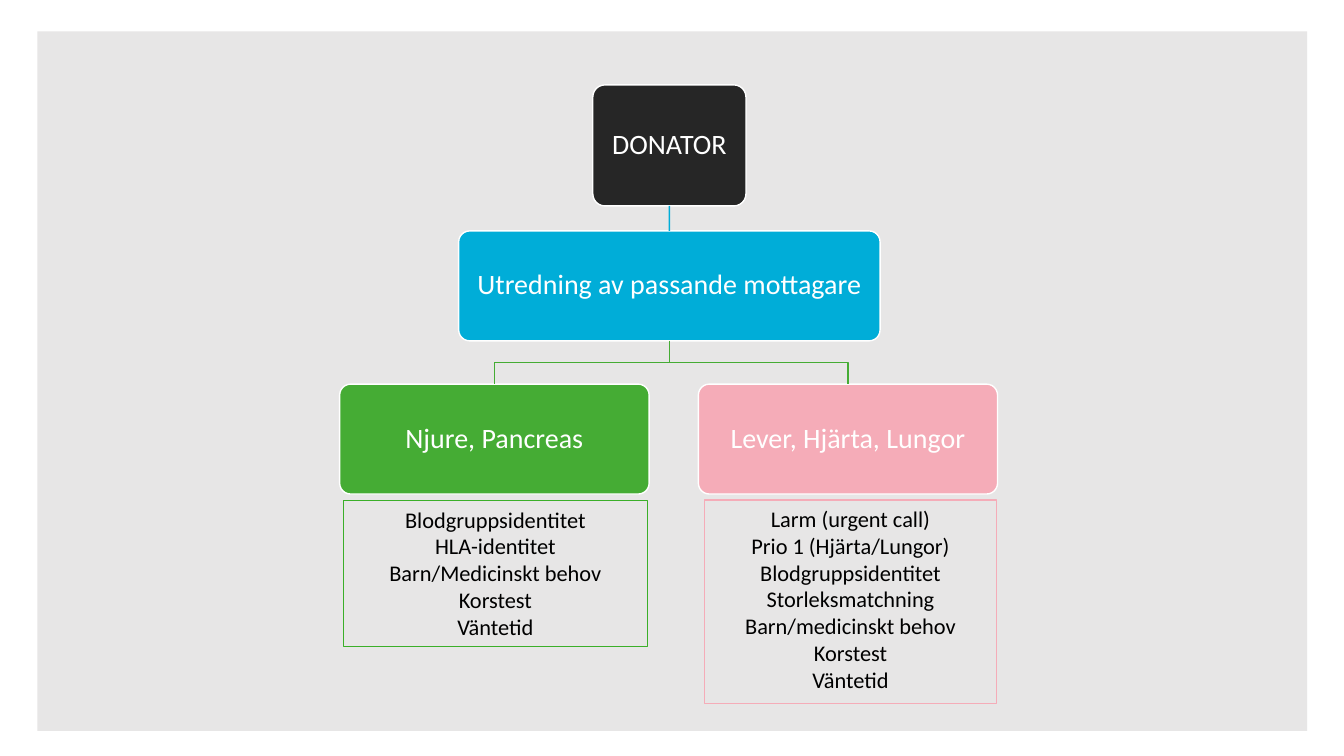
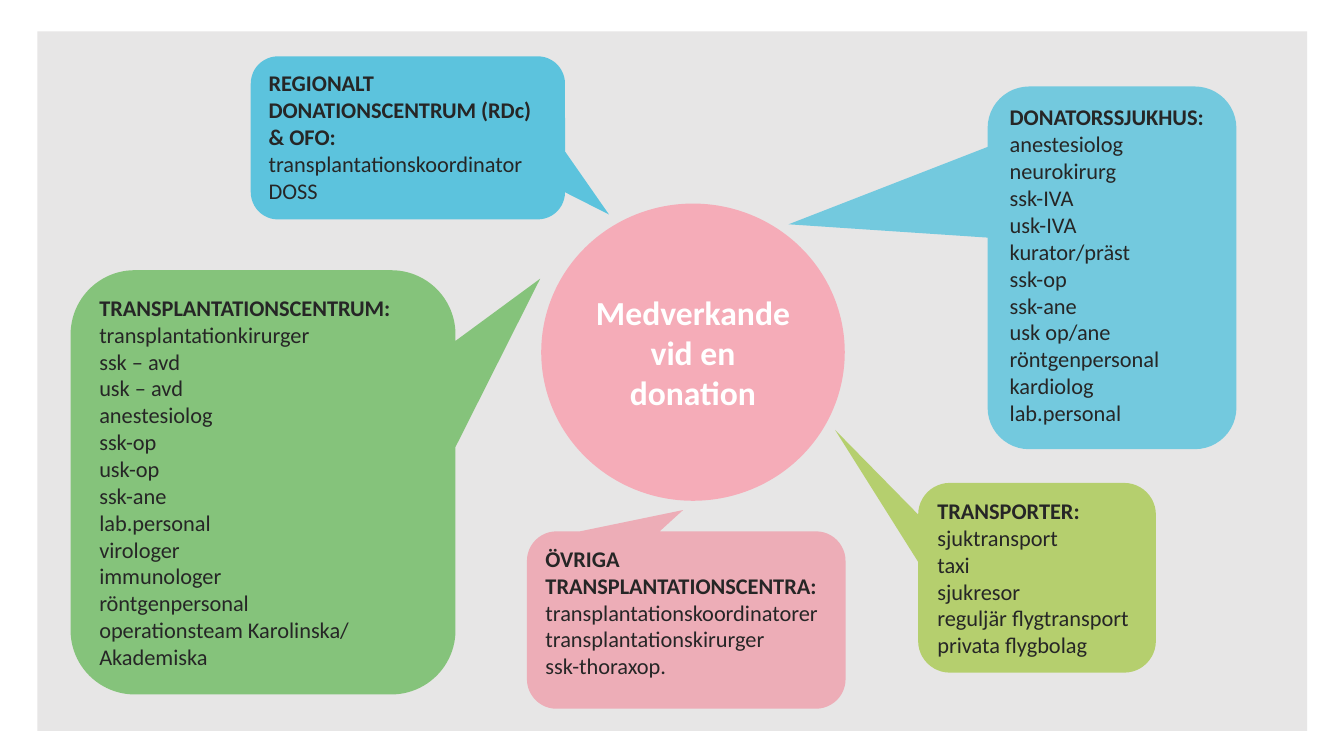
from lxml.etree import SubElement
from pptx import Presentation
from pptx.dml.color import RGBColor
from pptx.enum.shapes import MSO_CONNECTOR as LINE, MSO_SHAPE as SHAPE
from pptx.enum.text import MSO_ANCHOR as ANCHOR, PP_ALIGN as ALIGN
from pptx.oxml.ns import qn
from pptx.util import Cm, Pt

WHITE = RGBColor(0xFF, 0xFF, 0xFF)
BLACK = RGBColor(0x00, 0x00, 0x00)
GREY = RGBColor(0xE7, 0xE6, 0xE6)
DARK = RGBColor(0x26, 0x26, 0x26)
BLUE = RGBColor(0x00, 0xAD, 0xD8)
GREEN = RGBColor(0x45, 0xAC, 0x34)
LEAF = RGBColor(0x3B, 0xAF, 0x29)
LIME = RGBColor(0x95, 0xC1, 0x1F)
PINK = RGBColor(0xF5, 0xAC, 0xB8)
ROSE = RGBColor(0xF1, 0x87, 0x98)


class Deck:
    """Holds the shared style and the slide being built."""

    font = "Calibri"
    body_size, node_size, hub_size = Pt(16), Pt(20), Pt(24)
    panel = (0.94, 0.79, 32, 17.63)

    def __init__(self):
        self.prs = Presentation()
        self.prs.slide_width, self.prs.slide_height = Cm(33.87), Cm(19.05)
        self.s = None

    def new_slide(self):
        self.s = self.prs.slides.add_slide(self.prs.slide_layouts[6])
        self.shape(SHAPE.RECTANGLE, self.panel, GREY)

    def shape(self, kind, box, fill):
        sp = self.s.shapes.add_shape(kind, *map(Cm, box))
        sp.shadow.inherit = False
        sp.fill.solid()
        sp.fill.fore_color.rgb = fill
        sp.line.fill.background()
        return sp

    def set_text(self, sp, lines, size, color, align=ALIGN.CENTER, anchor=ANCHOR.MIDDLE):
        tf = sp.text_frame
        tf.text = "\n".join(lines)
        tf.word_wrap = True
        tf.vertical_anchor = anchor
        for p in tf.paragraphs:
            p.alignment = align
            for r in p.runs:
                r.font.name, r.font.size = self.font, size
                r.font.color.rgb = color
        return tf

    def node(self, text, box, fill):
        sp = self.shape(SHAPE.ROUNDED_RECTANGLE, box, fill)
        sp.adjustments[0] = 0.1
        sp.line.color.rgb = WHITE
        sp.line.width = Pt(1)
        tf = self.set_text(sp, [text], self.node_size, WHITE)
        tf.margin_left = tf.margin_right = Cm(0.2)
        tf.paragraphs[0].line_spacing = 0.9
        return sp

    def link(self, parent, child, color):
        """Join parent to child: straight if centred, else with a step halfway."""
        x1, x2 = (n.left + n.width // 2 for n in (parent, child))
        y1, y2 = parent.top + parent.height, child.top
        if abs(x1 - x2) < Cm(0.1):
            line = self.s.shapes.add_connector(LINE.STRAIGHT, x1, y1, x2, y2)
            line.begin_connect(parent, 2)
            line.end_connect(child, 0)
            SubElement(line.element.spPr, qn("a:effectLst"))
        else:
            mid = (y1 + y2) // 2
            outline = self.s.shapes.build_freeform(x1, y1)
            outline.add_line_segments([(x1, mid), (x2, mid), (x2, y2)], close=False)
            line = outline.convert_to_shape()
            line.shadow.inherit = False
            line.fill.background()
        line.line.color.rgb = color
        line.line.width = Pt(1)

    def criteria(self, lines, box, outline):
        sp = self.s.shapes.add_textbox(*map(Cm, box))
        sp.line.color.rgb = outline
        sp.line.width = Pt(0.75)
        self.set_text(sp, lines, self.body_size, BLACK, anchor=ANCHOR.TOP)

    def hub(self, text, box):
        sp = self.shape(SHAPE.FLOWCHART_CONNECTOR, box, PINK)
        tf = self.set_text(sp, [text], self.hub_size, WHITE)
        tf.paragraphs[0].runs[0].font.bold = True

    def callout(self, lines, box, tip, fill, opacity=60):
        """Speech bubble with a bold first line; tip is relative to its centre."""
        sp = self.shape(SHAPE.ROUNDED_RECTANGULAR_CALLOUT, box, fill)
        sp.adjustments[0], sp.adjustments[1] = tip
        color = sp.element.spPr.find(qn("a:solidFill"))[0]
        SubElement(color, qn("a:alpha")).set("val", str(opacity * 1000))
        tf = self.set_text(sp, lines, self.body_size, DARK, ALIGN.LEFT, ANCHOR.TOP)
        tf.paragraphs[0].runs[0].font.bold = True


def matching_slide(deck):
    deck.new_slide()
    donor = deck.node("DONATOR", (14.94, 2.14, 3.86, 3.05), DARK)
    search = deck.node("Utredning av passande mottagare", (11.56, 5.82, 10.62, 2.77), BLUE)
    kidney = deck.node("Njure, Pancreas", (8.56, 9.68, 7.8, 2.77), GREEN)
    liver = deck.node("Lever, Hjärta, Lungor", (17.6, 9.68, 7.54, 2.77), PINK)
    deck.link(donor, search, BLUE)
    for organs in (kidney, liver):
        deck.link(search, organs, GREEN)

    deck.criteria(["Blodgruppsidentitet", "HLA-identitet", "Barn/Medicinskt behov",
                   "Korstest", "Väntetid"], (8.66, 12.62, 7.65, 3.68), LEAF)
    deck.criteria(["Larm (urgent call)", "Prio 1 (Hjärta/Lungor)", "Blodgruppsidentitet",
                   "Storleksmatchning", "Barn/medicinskt behov", "Korstest", "Väntetid"],
                  (17.75, 12.6, 7.37, 5.13), PINK)


def participants_slide(deck):
    deck.new_slide()
    deck.hub("Medverkande vid en donation", (13.64, 5.13, 7.65, 7.49))
    deck.callout(["REGIONALT DONATIONSCENTRUM (RDc) & OFO:",
                  "transplantationskoordinator", "DOSS"],
                 (6.32, 1.42, 7.92, 4.11), (0.64, 0.47), BLUE)
    deck.callout(["TRANSPLANTATIONSCENTRUM:", "transplantationkirurger", "ssk – avd",
                  "usk – avd", "anestesiolog", "ssk-op", "usk-op", "ssk-ane",
                  "lab.personal", "virologer", "immunologer", "röntgenpersonal",
                  "operationsteam Karolinska/", "Akademiska"],
                 (1.78, 6.81, 9.7, 10.69), (0.72, -0.48), GREEN)
    deck.callout(["TRANSPORTER:", "sjuktransport", "taxi", "sjukresor",
                  "reguljär flygtransport", "privata flygbolag"],
                 (23.14, 12.17, 5.99, 4.78), (-0.85, -0.78), LIME)
    deck.callout(["ÖVRIGA TRANSPLANTATIONSCENTRA:", "transplantationskoordinatorer",
                  "transplantationskirurger", "ssk-thoraxop."],
                 (13.28, 13.39, 8.03, 4.47), (-0.01, -0.62), ROSE)
    deck.callout(["DONATORSSJUKHUS:", "anestesiolog", "neurokirurg", "ssk-IVA", "usk-IVA",
                  "kurator/präst", "ssk-op", "ssk-ane", "usk op/ane", "röntgenpersonal",
                  "kardiolog", "lab.personal"],
                 (24.89, 2.18, 6.27, 9.14), (-1.3, -0.12), BLUE, opacity=50)


def main():
    deck = Deck()
    matching_slide(deck)
    participants_slide(deck)
    deck.prs.save("out.pptx")


if __name__ == "__main__":
    main()
